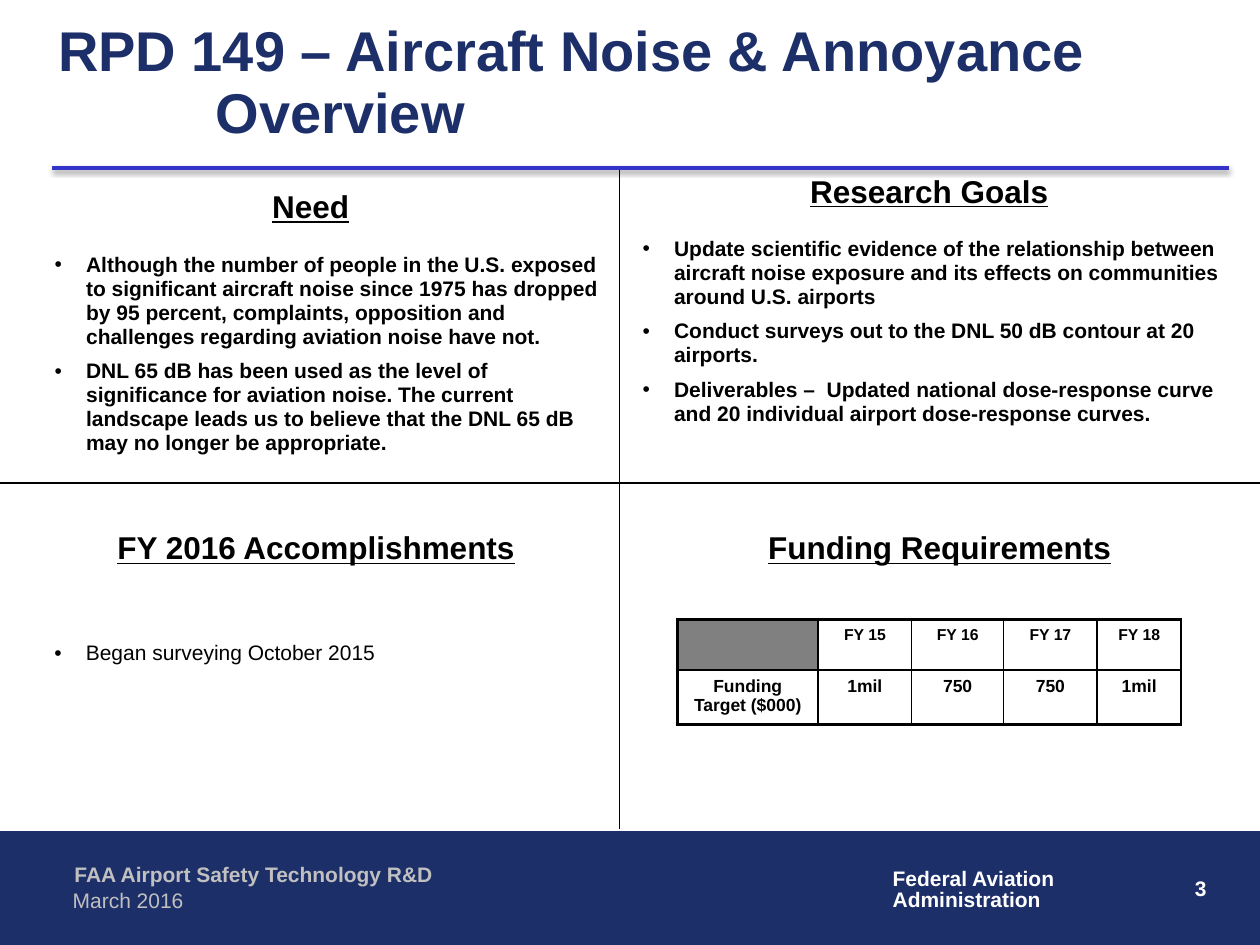
"""Build the aircraft noise research overview slide with four quadrants."""
import lxml.etree
import pptx
import pptx.dml.color
import pptx.enum.shapes
import pptx.enum.text
import pptx.oxml
import pptx.oxml.ns
import pptx.util

Pt = pptx.util.Pt
ALIGN = pptx.enum.text.PP_ALIGN
ANCHOR = pptx.enum.text.MSO_ANCHOR
NAVY = pptx.dml.color.RGBColor(0x1D, 0x2F, 0x68)
BLUE = pptx.dml.color.RGBColor(0x33, 0x33, 0xCC)
BLACK = pptx.dml.color.RGBColor(0, 0, 0)
WHITE = pptx.dml.color.RGBColor(0xFF, 0xFF, 0xFF)
SILVER = pptx.dml.color.RGBColor(0xC0, 0xC0, 0xC0)
GRAY = pptx.dml.color.RGBColor(0x80, 0x80, 0x80)
NAMESPACE = pptx.oxml.ns.nsdecls("a")


def write(para, text, size, color=BLACK, bold=True, underline=False, align=ALIGN.LEFT):
    """Add one formatted run to a paragraph."""
    para.alignment = align
    span = para.add_run()
    span.text = text
    span.font.name = "Arial"
    span.font.size = Pt(size)
    span.font.color.rgb = color
    span.font.bold = bold
    span.font.underline = underline


def fill_box(box, place, lines, spacing=1, gap=0, bullet=False, **style):
    """Place a text shape and write its paragraphs."""
    box.left, box.top, box.width, box.height = [Pt(length) for length in place]
    frame = box.text_frame
    frame.word_wrap = True
    frame.auto_size = pptx.enum.text.MSO_AUTO_SIZE.NONE
    frame.vertical_anchor = ANCHOR.TOP
    for index, line in enumerate(lines):
        para = frame.add_paragraph() if index else frame.paragraphs[0]
        para.line_spacing = spacing
        para.space_before = Pt(gap if index else 0)
        if bullet:
            properties = para._p.get_or_add_pPr()
            properties.set("marL", str(Pt(18)))
            properties.set("indent", str(-Pt(18)))
            for markup in (
                f'<a:buClr {NAMESPACE}><a:srgbClr val="{BLACK}"/></a:buClr>',
                f'<a:buFont {NAMESPACE} typeface="Arial"/>',
                f'<a:buChar {NAMESPACE} char="•"/>',
            ):
                properties.append(pptx.oxml.parse_xml(markup))
        write(para, line, **style)


deck = pptx.Presentation()
deck.slide_width, deck.slide_height = Pt(720), Pt(540)
page = deck.slides.add_slide(deck.slide_layouts[4])
shapes = page.shapes
holders = {holder.placeholder_format.idx: holder for holder in page.placeholders}

band = shapes.add_shape(pptx.enum.shapes.MSO_SHAPE.RECTANGLE, 0, Pt(475), Pt(720), Pt(64.5))
band.shadow.inherit = False
band.fill.solid()
band.fill.fore_color.rgb = NAVY
band.line.color.rgb = NAVY
band.line.width = Pt(0.75)

footers = [
    ((546.5, 497, 150, 36), ["3"], WHITE, True, ALIGN.RIGHT, 1),
    ((503, 493, 115, 32), ["Federal Aviation", "Administration"], WHITE, True, ALIGN.LEFT, 0.85),
    ((35.5, 489, 376, 22), ["FAA Airport Safety Technology R&D"], SILVER, True, ALIGN.LEFT, 1),
    ((34.5, 503.5, 294, 22), ["March 2016"], SILVER, False, ALIGN.LEFT, 1),
]
for place, lines, color, bold, align, spacing in footers:
    fill_box(shapes.add_textbox(0, 0, 0, 0), place, lines, spacing,
             size=12, color=color, bold=bold, align=align)

title = shapes.title
fill_box(title, (26, 24, 667.5, 48), ["RPD 149 – Aircraft Noise & Annoyance Overview"],
         0.93, size=32, color=NAVY)
title.text_frame.vertical_anchor = ANCHOR.MIDDLE
title_properties = title.text_frame.paragraphs[0]._p.get_or_add_pPr()
title_properties.set("marL", str(Pt(90)))
title_properties.set("indent", str(-Pt(90)))

headings = [
    (1, "Need", (39.5, 105, 276, 24), ALIGN.CENTER),
    (3, "Research Goals", (378, 96, 306, 24), ALIGN.CENTER),
    (None, "FY 2016 Accomplishments", (60, 300, 300, 27), ALIGN.LEFT),
    (None, "Funding Requirements", (378, 300, 318, 39), ALIGN.CENTER),
]
for holder, text, place, align in headings:
    box = holders[holder] if holder else shapes.add_textbox(0, 0, 0, 0)
    fill_box(box, place, [text], 0.95, size=18, underline=True, align=align)

bullet_lists = [
    (2, (24, 141, 330, 125), True, [
        "Although the number of people in the U.S. exposed to significant aircraft noise since 1975 "
        "has dropped by 95 percent, complaints, opposition and challenges regarding aviation noise "
        "have not.",
        "DNL 65 dB has been used as the level of significance for aviation noise. The current "
        "landscape leads us to believe that the DNL 65 dB may no longer be appropriate.",
    ]),
    (4, (360, 132, 348, 119), True, [
        "Update scientific evidence of the relationship between aircraft noise exposure and its "
        "effects on communities around U.S. airports",
        "Conduct surveys out to the DNL 50 dB contour at 20 airports.",
        "Deliverables –  Updated national dose-response curve and 20 individual airport "
        "dose-response curves.",
    ]),
    (None, (24, 363, 330, 21), False, ["Began surveying October 2015"]),
]
for holder, place, bold, lines in bullet_lists:
    box = holders[holder] if holder else shapes.add_textbox(0, 0, 0, 0)
    fill_box(box, place, lines, 0.95, gap=6, bullet=True, size=12, bold=bold)

rows = [["", "FY 15", "FY 16", "FY 17", "FY 18"],
        ["Funding Target ($000)", "1mil", "750", "750", "1mil"]]
table = shapes.add_table(2, 5, Pt(387), Pt(354), Pt(288), Pt(60)).table
table.first_row = table.horz_banding = False
for column, width in zip(table.columns, (80.5, 53.5, 52.5, 53.5, 48)):
    column.width = Pt(width)
for row, height in zip(table.rows, (29, 31)):
    row.height = Pt(height)
for row_index, row in enumerate(rows):
    for column_index, text in enumerate(row):
        cell = table.cell(row_index, column_index)
        properties = cell._tc.get_or_add_tcPr()
        thick = {"lnL": column_index == 0, "lnT": row_index == 0, "lnB": row_index == 1}
        for side in ("lnL", "lnR", "lnT", "lnB"):
            width = Pt(2.25 if thick.get(side) else 1)
            properties.append(pptx.oxml.parse_xml(
                f'<a:{side} {NAMESPACE} w="{width}"><a:solidFill>'
                f'<a:srgbClr val="{BLACK}"/></a:solidFill></a:{side}>'))
        para = cell.text_frame.paragraphs[0]
        if text:
            cell.fill.background()
            write(para, text, 9 + row_index, align=ALIGN.CENTER)
        else:
            cell.fill.solid()
            cell.fill.fore_color.rgb = GRAY
            para.font.size = Pt(9)

rules = [((354, 96, 354, 474), BLACK, 0.75),
         ((0, 276, 720, 276), BLACK, 0.75),
         ((30, 96, 702, 96), BLUE, 2)]
for ends, color, width in rules:
    rule = shapes.add_connector(pptx.enum.shapes.MSO_CONNECTOR.STRAIGHT,
                                *[Pt(end) for end in ends])
    rule.line.color.rgb = color
    rule.line.width = Pt(width)
    effects = lxml.etree.SubElement(rule._element.spPr, pptx.oxml.ns.qn("a:effectLst"))
    if color == BLUE:
        effects.append(pptx.oxml.parse_xml(
            f'<a:outerShdw {NAMESPACE} blurRad="{Pt(3.1)}" dist="{Pt(1.6)}" dir="5400000">'
            f'<a:srgbClr val="{BLACK}"><a:alpha val="38000"/></a:srgbClr></a:outerShdw>'))

deck.save("out.pptx")
